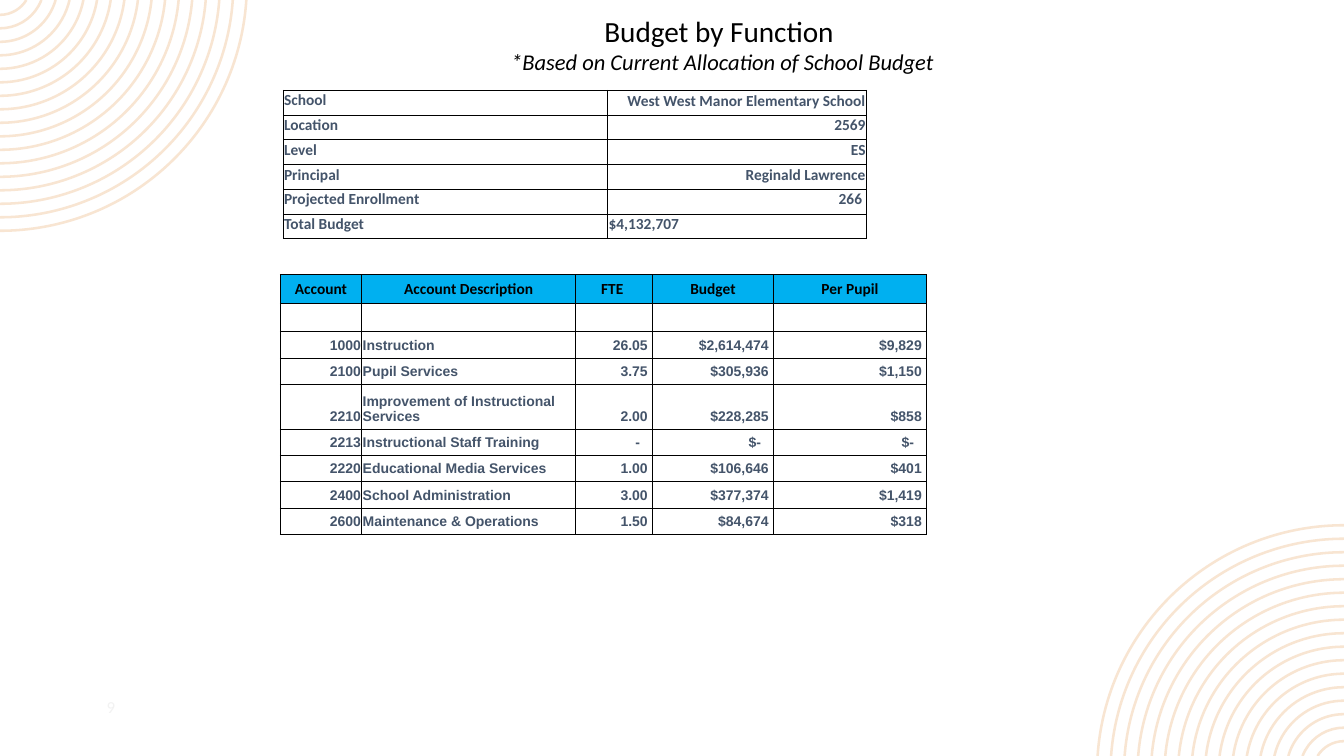
from dataclasses import dataclass
from math import asin, cos, degrees

from lxml.etree import SubElement as Sub
from pptx import Presentation
from pptx.dml.color import RGBColor as Rgb
from pptx.enum.text import MSO_ANCHOR as Anchor, PP_ALIGN as Align
from pptx.oxml.ns import qn
from pptx.util import Pt


@dataclass(frozen=True)
class Theme:
    black: str = "000000"
    white: str = "FFFFFF"
    slate: str = "44546A"
    blue: str = "00B0F0"
    peach: str = "F8E5D2"
    faint: str = "F2F2F2"
    head: str = "Calibri"
    body: str = "Arial"
    title: float = 20.9
    note: float = 16.1
    label: int = 11
    small: int = 10
    page: int = 12


THEME = Theme()
WIDE, HIGH = 960, 540
PLAIN = "{2D5ABB26-0587-4C30-8999-92F81FD0307C}"
SIDES = {"L": (0, -1), "R": (0, 1), "T": (-1, 0), "B": (1, 0)}

FACTS = [
    ("School", "West West Manor Elementary School"),
    ("Location", "2569"),
    ("Level", "ES"),
    ("Principal", "Reginald Lawrence"),
    ("Projected Enrollment", "266"),
    ("Total Budget", "$4,132,707"),
]
HEADS = ("Account", "Account Description", "FTE ", "Budget", "Per Pupil")
COSTS = [
    ("1000", "Instruction", "26.05", "$2,614,474", "$9,829"),
    ("2100", "Pupil Services", "3.75", "$305,936", "$1,150"),
    ("2210", "Improvement of Instructional Services", "2.00", "$228,285", "$858"),
    ("2213", "Instructional Staff Training", "-", "$-", "$-"),
    ("2220", "Educational Media Services", "1.00", "$106,646", "$401"),
    ("2400", "School Administration", "3.00", "$377,374", "$1,419"),
    ("2600", "Maintenance & Operations", "1.50", "$84,674", "$318"),
]


def style(par, size, color, face, bold=False, slant=False):
    for run in par.runs:
        font = run.font
        font.size, font.name = Pt(size), face
        font.bold, font.italic = bold, slant
        font.color.rgb = Rgb.from_string(color)


def place(shape, box):
    shape.left, shape.top, shape.width, shape.height = map(Pt, box)


# Corner rings: arcs around a point just off the corner
def rings(slide, x, y, way, count=17, drop=11.5, first=22.1, gap=9.64):
    radii = [first + gap * i for i in range(count)]
    pen = None
    for rad in radii:
        start = Pt(x + way * rad * cos(asin(drop / rad))), Pt(y)
        if pen is None:
            pen = slide.shapes.build_freeform(*start)
        else:
            pen.move_to(*start)
        pen.add_line_segments([(Pt(x), Pt(y + way * (rad - drop)))], close=False)
    shape = pen.convert_to_shape()
    # Bend each straight piece into an arc
    for rad, line in zip(radii, shape._element.xpath(".//a:lnTo")):
        turn = degrees(asin(drop / rad))
        base = 0 if way > 0 else 180
        route = line.getparent()
        size = str(Pt(rad))
        arc = Sub(route, qn("a:arcTo"), wR=size, hR=size,
                  stAng=str(round((base + turn) * 60000)),
                  swAng=str(round((90 - turn) * 60000)))
        route.replace(line, arc)
    shape.shadow.inherit = False
    shape.fill.background()
    shape.line.width = Pt(1.8)
    shape.line.color.rgb = Rgb.from_string(THEME.peach)


# Title with a subtitle line
def heading(slide, box):
    title = slide.shapes.title
    place(title, box)
    frame = title.text_frame
    frame.word_wrap = True
    frame.vertical_anchor = Anchor.MIDDLE
    frame.margin_top = frame.margin_bottom = 0
    frame.text = "Budget by Function \n*Based on Current Allocation of School Budget"
    for par, size, slant in zip(frame.paragraphs, (THEME.title, THEME.note),
                                (False, True)):
        par.alignment = Align.CENTER
        style(par, size, THEME.black, THEME.head, slant=slant)


# Bare table; only cells that pass the inside test get a frame
def grid(slide, left, top, cols, rows, inside):
    shape = slide.shapes.add_table(len(rows), len(cols), Pt(left), Pt(top),
                                   Pt(sum(cols)), Pt(sum(rows)))
    table = shape.table
    table.first_row = table.horz_banding = False
    shape._element.xpath(".//a:tableStyleId")[0].text = PLAIN
    for col, width in zip(table.columns, cols):
        col.width = Pt(width)
    for r, height in enumerate(rows):
        table.rows[r].height = Pt(height)
        for c in range(len(cols)):
            cell = table.cell(r, c)
            edge(cell, [s for s, (dr, dc) in SIDES.items()
                        if inside(r, c) or inside(r + dr, c + dc)])
            fill(cell, "", THEME.small, THEME.slate, THEME.body)
    return table


def edge(cell, sides):
    props = cell._tc.get_or_add_tcPr()
    for side in sides:
        line = Sub(props, qn("a:ln" + side), w=str(Pt(0.5)))
        paint = Sub(line, qn("a:solidFill"))
        Sub(paint, qn("a:srgbClr"), val=THEME.black)


def fill(cell, text, size, color, face, align=Align.LEFT, back=None,
         anchor=Anchor.BOTTOM, pad=0.7):
    cell.margin_left = cell.margin_top = Pt(0.7)
    cell.margin_right, cell.margin_bottom = Pt(pad), Pt(3.4)
    cell.vertical_anchor = anchor
    par = cell.text_frame.paragraphs[0]
    par.text = text
    par.alignment = align
    style(par, size, color, face, bold=True)
    if not text:
        par._p.get_or_add_endParaRPr().set("sz", str(size * 100))
    if back:
        cell.fill.solid()
        cell.fill.fore_color.rgb = Rgb.from_string(back)
    else:
        cell.fill.background()


# School facts, with a spare row above and a spare column at the right
def facts(slide, left, top):
    table = grid(slide, left, top, (231.8, 185, 46.1), [17.55] * 7,
                 lambda r, c: 1 <= r <= 6 and 0 <= c <= 1)
    look = (THEME.label, THEME.slate, THEME.head)
    for r, (name, value) in enumerate(FACTS, 1):
        total = name == "Total Budget"
        fill(table.cell(r, 0), name, *look, anchor=Anchor.TOP)
        fill(table.cell(r, 1), value, *look,
             align=Align.LEFT if total else Align.RIGHT,
             back=THEME.white if total else None,
             pad=3.2 if name == "Projected Enrollment" else 0.7)


# Costs by account, with a spare row below and a spare column at the right
def costs(slide, left, top):
    rows = [20.4] * 2 + [18.7] * 2 + [32.4] + [18.7] * 4 + [20.4]
    table = grid(slide, left, top, (58.2, 152.8, 54.9, 86.4, 109.4, 17.3), rows,
                 lambda r, c: 0 <= r <= 8 and 0 <= c <= 4)
    for c, head in enumerate(HEADS):
        fill(table.cell(0, c), head, THEME.label, THEME.black, THEME.head,
             Align.CENTER, THEME.blue)
        fill(table.cell(1, c), "", THEME.small, THEME.slate, THEME.body,
             back=THEME.white)
    for r, line in enumerate(COSTS, 2):
        for c, text in enumerate(line):
            pad = 0.7 if c < 2 else 9 if text.endswith("-") else 3.5
            fill(table.cell(r, c), text, THEME.small, THEME.slate, THEME.body,
                 Align.LEFT if c == 1 else Align.RIGHT,
                 THEME.white if c < 3 else None, pad=pad)


# Page number
def folio(slide, box):
    frame = slide.shapes.add_textbox(*map(Pt, box)).text_frame
    frame.word_wrap = True
    frame.vertical_anchor = Anchor.MIDDLE
    frame.text = "9"
    style(frame.paragraphs[0], THEME.page, THEME.faint, THEME.head)


def main():
    deck = Presentation()
    deck.slide_width, deck.slide_height = Pt(WIDE), Pt(HIGH)
    slide = deck.slides.add_slide(deck.slide_layouts[5])
    rings(slide, 0, 0, 1)
    rings(slide, WIDE, HIGH, -1)
    heading(slide, (192, 8.5, 648, 46))
    facts(slide, 202.2, 46.9)
    costs(slide, 200.2, 196.2)
    folio(slide, (69, 494, 40, 22))
    deck.save("out.pptx")


if __name__ == "__main__":
    main()
